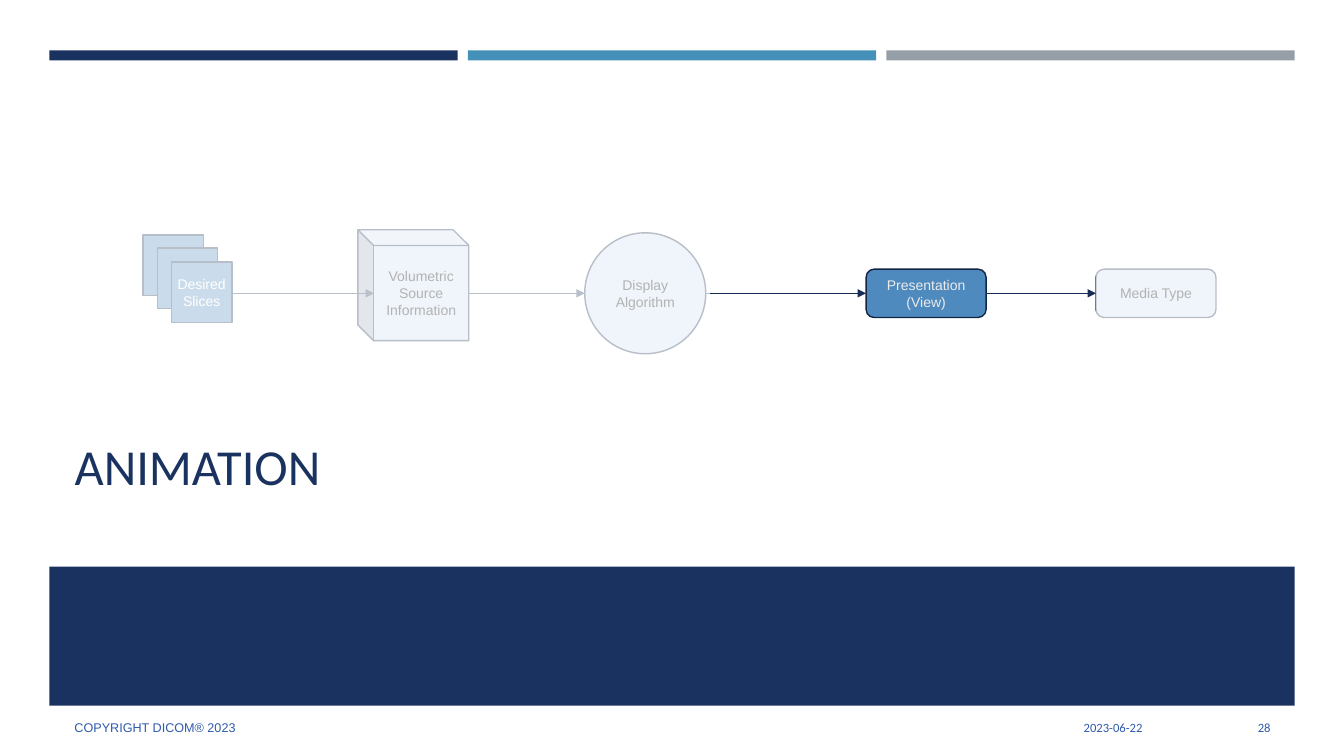
from dataclasses import dataclass

from lxml.etree import SubElement
from pptx import Presentation
from pptx.dml.color import RGBColor
from pptx.enum.shapes import MSO_CONNECTOR, MSO_SHAPE as Shape
from pptx.enum.text import MSO_ANCHOR as Anchor, MSO_AUTO_SIZE, PP_ALIGN as Align
from pptx.oxml.ns import qn
from pptx.util import Inches, Pt


@dataclass(frozen=True)
class Theme:
    navy: str = "1A3260"
    blue: str = "4590B8"
    grey: str = "969FA7"
    footer: str = "2F5AAC"
    pale: str = "CCDEF0"
    active: str = "4F8ABE"
    outline: str = "132547"
    arrow: str = "172D56"
    black: str = "000000"
    light: str = "EBEBEB"
    white: str = "FFFFFF"
    heading: str = "Calibri"
    body: str = "Arial"
    title_size: float = 36
    label_size: float = 10
    footer_size: float = 9
    line_width: float = 1


THEME = Theme()
FLOW_Y = 2.91  # height of the arrows through the flow


def rgb(value):
    return RGBColor.from_string(value)


def write_text(target, text, *, size=THEME.label_size, font=THEME.body,
               color=THEME.black, align=Align.CENTER, anchor=Anchor.MIDDLE,
               inset=None):
    """Fill a shape with text, one paragraph for each line."""
    frame = target.text_frame
    frame.word_wrap = True
    frame.auto_size = MSO_AUTO_SIZE.NONE
    frame.vertical_anchor = anchor
    if inset is not None:
        frame.margin_left = frame.margin_right = Inches(inset)
        frame.margin_top = frame.margin_bottom = Inches(inset)
    frame.text = text
    for para in frame.paragraphs:
        para.alignment = align
        for span in para.runs:
            span.font.size = Pt(size)
            span.font.name = font
            span.font.color.rgb = rgb(color)


def add_block(page, kind, left, top, width, height, fill, *, outline=None, opacity=None):
    block = page.shapes.add_shape(
        kind, Inches(left), Inches(top), Inches(width), Inches(height))
    block.shadow.inherit = False
    block.fill.solid()
    block.fill.fore_color.rgb = rgb(fill)
    if outline:
        block.line.color.rgb = rgb(outline)
        block.line.width = Pt(THEME.line_width)
    else:
        block.line.fill.background()
    if opacity is not None:
        color = block.fill._xPr.find(qn("a:solidFill"))[0]
        SubElement(color, qn("a:alpha"), val=str(opacity * 1000))
    return block


def add_step(page, kind, left, top, width, height, text="", fill=THEME.pale, **text_format):
    step = add_block(page, kind, left, top, width, height, fill, outline=THEME.outline)
    if text:
        write_text(step, text, **text_format)
    return step


def add_arrow(page, start, end):
    arrow = page.shapes.add_connector(
        MSO_CONNECTOR.STRAIGHT, Inches(start), Inches(FLOW_Y), Inches(end), Inches(FLOW_Y))
    arrow.line.color.rgb = rgb(THEME.arrow)
    arrow.line.width = Pt(THEME.line_width)
    SubElement(arrow.line._get_or_add_ln(), qn("a:tailEnd"), type="triangle")
    SubElement(arrow._element.spPr, qn("a:effectLst"))


def add_footer(page, left, width, text, font, align):
    box = page.shapes.add_textbox(Inches(left), Inches(7.02), Inches(width), Inches(0.4))
    write_text(box, text, size=THEME.footer_size, font=font,
               color=THEME.footer, align=align)


def add_frame(page):
    # Top bars and bottom band
    for index, color in enumerate((THEME.navy, THEME.blue, THEME.grey)):
        add_block(page, Shape.RECTANGLE, 0.49 + index * 4.15, 0.5, 4.05, 0.1, color)
    add_block(page, Shape.RECTANGLE, 0.49, 5.62, 12.35, 1.38, THEME.navy)

    # Footer
    add_footer(page, 8.32, 3.11, "2023-06-22", THEME.heading, Align.RIGHT)
    add_footer(page, 0.64, 7.56, "COPYRIGHT DICOM® 2023", THEME.body, Align.LEFT)
    add_footer(page, 11.55, 1.15, "28", THEME.heading, Align.RIGHT)


def add_title(page):
    title = page.shapes.title
    title.left, title.top = Inches(0.64), Inches(3.33)
    title.width, title.height = Inches(12.06), Inches(1.64)
    write_text(title, "ANIMATION", size=THEME.title_size, font=THEME.heading,
               color=THEME.navy, align=Align.LEFT, anchor=Anchor.BOTTOM)


def add_flow(page):
    # Processing steps
    cube = add_step(page, Shape.CUBE, 3.55, 2.28, 1.1, 1.1, "Volumetric Source Information")
    cube.adjustments[0] = 0.142
    cube._element.spPr.get_or_add_xfrm().set("flipH", "1")
    add_step(page, Shape.OVAL, 5.8, 2.31, 1.2, 1.2, "Display Algorithm")
    add_step(page, Shape.ROUNDED_RECTANGLE, 8.59, 2.67, 1.19, 0.48,
             "Presentation\n(View)", THEME.active, color=THEME.light)
    add_step(page, Shape.ROUNDED_RECTANGLE, 10.87, 2.67, 1.19, 0.48, "Media Type")

    # Arrows between steps
    for start, end in ((2.3, 3.71), (4.65, 5.8), (7, 8.59), (9.78, 10.87)):
        add_arrow(page, start, end)

    # Stack of slices, labelled on the front one
    for left, top, label in ((1.42, 2.33, ""), (1.56, 2.46, ""), (1.7, 2.6, "Desired Slices")):
        add_step(page, Shape.RECTANGLE, left, top, 0.6, 0.6, label, THEME.active,
                 color=THEME.white, inset=0)

    # Veils that fade the inactive steps
    for left, top, width in ((1.2, 2.08, 5.84), (10.87, 2.01, 1.57)):
        add_block(page, Shape.RECTANGLE, left, top, width, 1.64, THEME.white, opacity=70)


def main():
    deck = Presentation()
    deck.slide_width, deck.slide_height = Inches(13.33), Inches(7.5)
    page = deck.slides.add_slide(deck.slide_layouts[5])
    add_frame(page)
    add_title(page)
    add_flow(page)
    deck.save("out.pptx")


if __name__ == "__main__":
    main()
